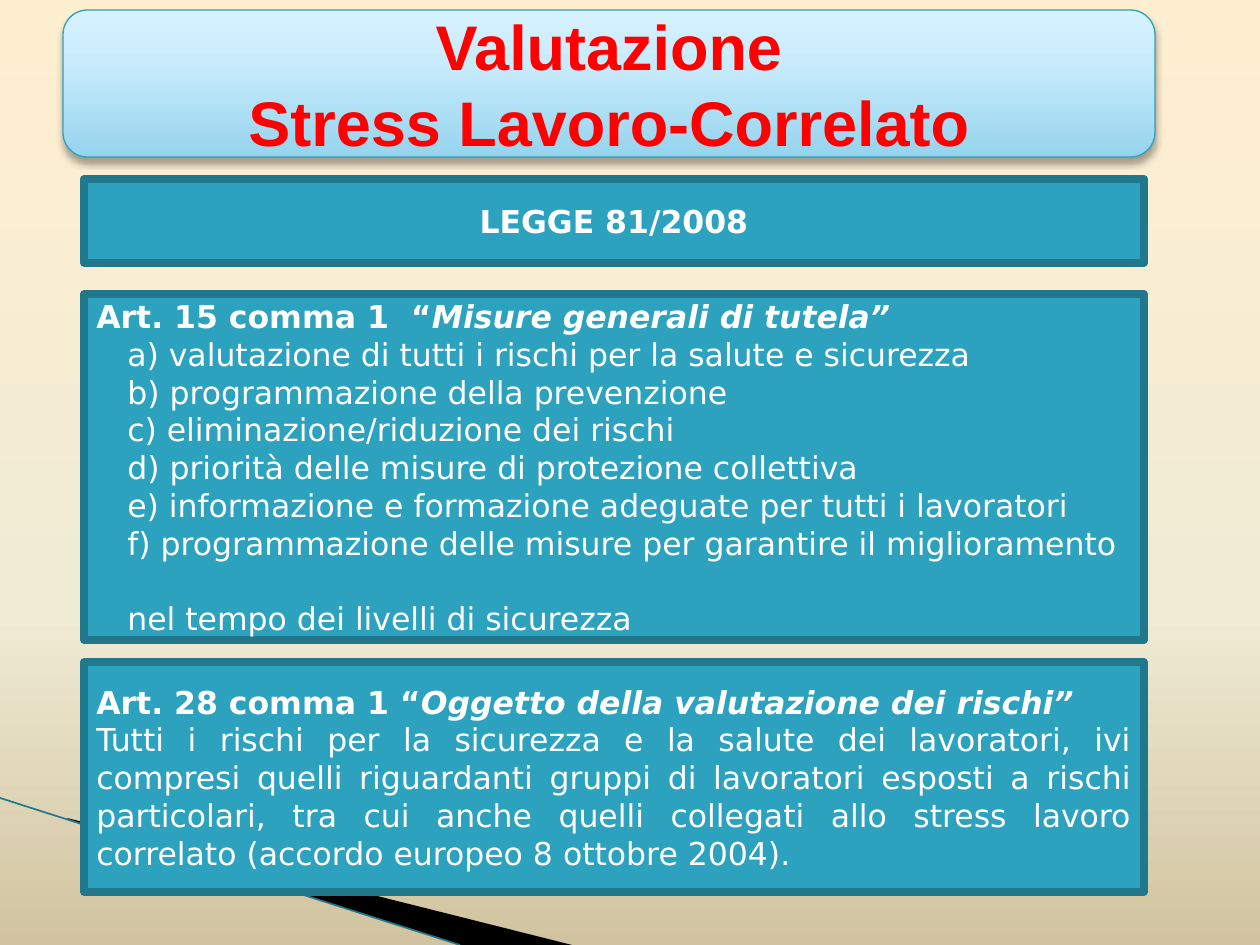
from dataclasses import dataclass

import pptx
import pptx.dml.color
import pptx.enum.shapes
import pptx.enum.text
import pptx.oxml.ns
import pptx.util
from lxml import etree

PX = 914400 / 126
SLIDE_WIDTH, SLIDE_HEIGHT = 1260, 945
ALIGN = pptx.enum.text.PP_ALIGN
SHAPE = pptx.enum.shapes.MSO_SHAPE
qn = pptx.oxml.ns.qn


@dataclass(frozen=True)
class Theme:
    panel: str = "2DA2BF"
    border: str = "21788D"
    swoosh: str = "000000"
    text: str = "FFFFFF"
    heading: str = "FF0000"
    backdrop: tuple = ((0, "FFEFD1"), (65, "F0EBD5"), (100, "D1C39F"))
    banner: tuple = ((0, "96D4EE"), (65, "C9ECFC"), (100, "D7F2FF"))
    heading_font: str = "Arial"
    body_font: str = "DejaVu Sans"
    heading_size: int = 36
    body_size: int = 18


THEME = Theme()


@dataclass(frozen=True)
class Run:
    text: str
    bold: bool = False
    italic: bool = False


@dataclass(frozen=True)
class Line:
    runs: tuple[Run, ...]
    align: ALIGN = ALIGN.JUSTIFY
    indent: int = 0
    space_before: float = 0


@dataclass(frozen=True)
class Panel:
    top: int
    height: int
    lines: tuple[Line, ...]


def article_title(article: str, subject: str) -> Line:
    return Line((Run(article, bold=True), Run(subject, bold=True, italic=True)))


MEASURES = (
    "a) valutazione di tutti i rischi per la salute e sicurezza",
    "b) programmazione della prevenzione",
    "c) eliminazione/riduzione dei rischi",
    "d) priorità delle misure di protezione collettiva",
    "e) informazione e formazione adeguate per tutti i lavoratori",
    "f) programmazione delle misure per garantire il miglioramento",
)
PANELS = (
    Panel(179, 84, (Line((Run("LEGGE 81/2008", bold=True),), ALIGN.CENTER),)),
    Panel(294, 346, (
        article_title("Art. 15 comma 1  “", "Misure generali di tutela”"),
        *(Line((Run(measure),), indent=31) for measure in MEASURES),
        Line((Run("nel tempo dei livelli di sicurezza"),), indent=31, space_before=21.6),
    )),
    Panel(662, 230, (
        article_title("Art. 28 comma 1 “", "Oggetto della valutazione dei rischi”"),
        Line((Run(
            "Tutti i rischi per la sicurezza e la salute dei lavoratori, ivi compresi "
            "quelli riguardanti gruppi di lavoratori esposti a rischi particolari, tra "
            "cui anche quelli collegati allo stress lavoro correlato (accordo europeo "
            "8 ottobre 2004)."),)),
    )),
)
HEADING = tuple(Line((Run(words, bold=True),), ALIGN.CENTER)
                for words in ("Valutazione", "Stress Lavoro-Correlato"))


def px(length: int) -> pptx.util.Emu:
    return pptx.util.Emu(round(length * PX))


def rgb(color: str) -> pptx.dml.color.RGBColor:
    return pptx.dml.color.RGBColor.from_string(color)


def write(paragraph, text: str, *, size: int, font: str, color: str,
          bold: bool = False, italic: bool = False) -> None:
    run = paragraph.add_run()
    run.text = text
    run.font.size = pptx.util.Pt(size)
    run.font.name = font
    run.font.bold = bold
    run.font.italic = italic
    run.font.color.rgb = rgb(color)


def fill_frame(shape, lines: tuple[Line, ...], **text_format) -> None:
    frame = shape.text_frame
    frame.word_wrap = True
    frame.vertical_anchor = pptx.enum.text.MSO_ANCHOR.MIDDLE
    for index, line in enumerate(lines):
        paragraph = frame.add_paragraph() if index else frame.paragraphs[0]
        paragraph.alignment = line.align
        if line.indent:
            paragraph._p.get_or_add_pPr().set("marL", str(px(line.indent)))
        if line.space_before:
            paragraph.space_before = pptx.util.Pt(line.space_before)
        for run in line.runs:
            write(paragraph, run.text, bold=run.bold, italic=run.italic, **text_format)


def paint_gradient(fill, element, stops: tuple, angle: int) -> None:
    """Fill with the given stops; the angle runs counter-clockwise."""
    fill.gradient()
    fill.gradient_angle = angle
    stop_list = element.find(".//" + qn("a:gsLst"))
    for stop in list(stop_list):
        stop_list.remove(stop)
    for percent, color in stops:
        stop = etree.SubElement(stop_list, qn("a:gs"), pos=str(percent * 1000))
        etree.SubElement(stop, qn("a:srgbClr"), val=color)


def add_box(slide, kind, left: int, top: int, width: int, height: int,
            border: str, border_width: float):
    box = slide.shapes.add_shape(kind, px(left), px(top), px(width), px(height))
    box.shadow.inherit = False
    box.line.color.rgb = rgb(border)
    box.line.width = pptx.util.Pt(border_width)
    return box


def add_panel(slide, panel: Panel) -> None:
    box = add_box(slide, SHAPE.RECTANGLE, 84, panel.top, 1060, panel.height,
                  THEME.border, 4.33)
    box.fill.solid()
    box.fill.fore_color.rgb = rgb(THEME.panel)
    fill_frame(box, panel.lines, size=THEME.body_size, font=THEME.body_font,
               color=THEME.text)


def add_heading(slide) -> None:
    banner = add_box(slide, SHAPE.ROUNDED_RECTANGLE, 63, 10, 1092, 147,
                     THEME.panel, 0.75)
    paint_gradient(banner.fill, banner.element, THEME.banner, 90)
    effects = banner.element.spPr.find(qn("a:effectLst"))
    shadow = etree.SubElement(
        effects, qn("a:outerShdw"), blurRad=str(pptx.util.Pt(4)),
        dist=str(pptx.util.Pt(3)), dir="5400000", rotWithShape="0")
    shade = etree.SubElement(shadow, qn("a:srgbClr"), val="000000")
    etree.SubElement(shade, qn("a:alpha"), val="35000")
    fill_frame(banner, HEADING, size=THEME.heading_size, font=THEME.heading_font,
               color=THEME.heading)


def add_swoosh(slide) -> None:
    outline = slide.shapes.build_freeform(67, 818, scale=PX)
    outline.add_line_segments([(572, SLIDE_HEIGHT), (460, SLIDE_HEIGHT), (68, 819)])
    band = outline.convert_to_shape()
    band.shadow.inherit = False
    band.fill.solid()
    band.fill.fore_color.rgb = rgb(THEME.swoosh)
    band.line.fill.background()
    edge = slide.shapes.add_connector(
        pptx.enum.shapes.MSO_CONNECTOR.STRAIGHT,
        px(0), px(798), px(460), px(SLIDE_HEIGHT))
    edge.line.color.rgb = rgb(THEME.border)
    edge.line.width = pptx.util.Pt(0.95)
    etree.SubElement(edge.element.spPr, qn("a:effectLst"))


def main() -> None:
    deck = pptx.Presentation()
    deck.slide_width, deck.slide_height = px(SLIDE_WIDTH), px(SLIDE_HEIGHT)
    slide = deck.slides.add_slide(deck.slide_layouts[6])
    paint_gradient(slide.background.fill, slide.element, THEME.backdrop, 270)
    add_swoosh(slide)
    for panel in PANELS:
        add_panel(slide, panel)
    add_heading(slide)
    deck.save("out.pptx")


if __name__ == "__main__":
    main()
